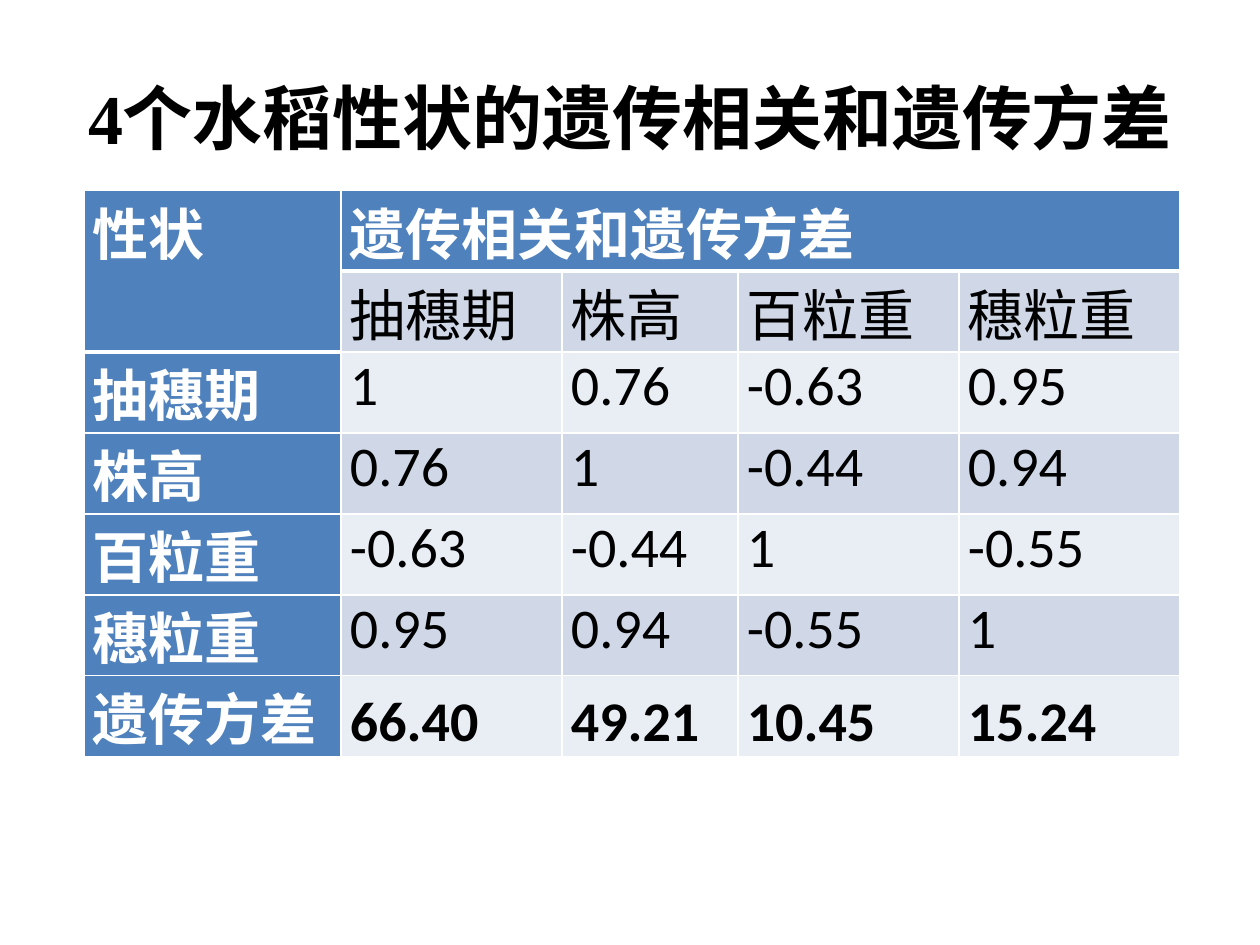
"""Build a slide with a table of genetic correlations of four rice traits."""
from lxml import etree
from pptx import Presentation
from pptx.dml.color import RGBColor
from pptx.enum.text import MSO_ANCHOR, PP_ALIGN
from pptx.oxml.ns import qn
from pptx.util import Emu, Pt

TOP, MIDDLE, BOTTOM = MSO_ANCHOR.TOP, MSO_ANCHOR.MIDDLE, MSO_ANCHOR.BOTTOM
LEFT, CENTER, JUSTIFY = PP_ALIGN.LEFT, PP_ALIGN.CENTER, PP_ALIGN.JUSTIFY
BLACK = RGBColor(0x00, 0x00, 0x00)
WHITE = RGBColor(0xFF, 0xFF, 0xFF)
BLUE = RGBColor(0x4F, 0x81, 0xBD)
BANDS = RGBColor(0xE9, 0xED, 0xF4), RGBColor(0xD0, 0xD8, 0xE8)

COL_WIDTHS = 257, 221, 176, 221, 221
ROW_HEIGHT = 81
TRAITS = ["抽穗期", "株高", "百粒重", "穗粒重"]
ROWS = [
    ["性状", "遗传相关和遗传方差", "", "", ""],
    ["", *TRAITS],
    [TRAITS[0], "1", "0.76", "-0.63", "0.95"],
    [TRAITS[1], "0.76", "1", "-0.44", "0.94"],
    [TRAITS[2], "-0.63", "-0.44", "1", "-0.55"],
    [TRAITS[3], "0.95", "0.94", "-0.55", "1"],
    ["遗传方差", "66.40", "49.21", "10.45", "15.24"],
]


def px(n):
    return Emu(round(n * 914400 / 126))


def write(tf, text, font="Calibri", size=32, color=BLACK, bold=False, align=LEFT):
    p = tf.paragraphs[0]
    p.alignment = align
    r = p.add_run()
    r.text = text
    r.font.name = font
    r.font.size = Pt(size)
    r.font.bold = bold
    r.font.color.rgb = color


def add_title(slide, text):
    sp = slide.shapes.add_textbox(px(63), px(38), px(1134), px(157))
    tf = sp.text_frame
    tf.word_wrap = True
    tf.vertical_anchor = MIDDLE
    write(tf, text, font="Times New Roman", size=40, bold=True, align=CENTER)


def set_borders(cell, **widths):
    tc_pr = cell._tc.get_or_add_tcPr()
    for side, width in widths.items():
        ln = etree.SubElement(tc_pr, qn(f"a:ln{side}"), w=str(Pt(width)))
        fill = etree.SubElement(ln, qn("a:solidFill"))
        etree.SubElement(fill, qn("a:srgbClr"), val=str(WHITE))


def format_cell(cell, row, col, text):
    is_header = row == 0 or col == 0
    is_variance = row == len(ROWS) - 1
    header_end = 2 if col == 0 else 1
    set_borders(cell, L=1, R=1, T=3 if row == header_end else 1,
                B=3 if row == header_end - 1 else 1)
    cell.fill.solid()
    cell.fill.fore_color.rgb = BLUE if is_header else BANDS[row % 2]
    cell.margin_left = cell.margin_right = px(9)
    cell.margin_top = cell.margin_bottom = 0
    cell.vertical_anchor = BOTTOM if is_variance and col else TOP
    if text:
        write(cell.text_frame, text, color=WHITE if is_header else BLACK,
              bold=is_header or is_variance, align=JUSTIFY if row < 2 else LEFT)


def add_trait_table(slide):
    frame = slide.shapes.add_table(len(ROWS), len(COL_WIDTHS), px(84), px(190),
                                   px(sum(COL_WIDTHS)), px(ROW_HEIGHT * len(ROWS)))
    table = frame.table
    for column, width in zip(table.columns, COL_WIDTHS):
        column.width = px(width)
    for row, texts in enumerate(ROWS):
        table.rows[row].height = px(ROW_HEIGHT)
        for col, text in enumerate(texts):
            format_cell(table.cell(row, col), row, col, text)
    table.cell(0, 0).merge(table.cell(1, 0))
    table.cell(0, 1).merge(table.cell(0, 4))


def main():
    prs = Presentation()
    prs.slide_width, prs.slide_height = px(1260), px(945)
    slide = prs.slides.add_slide(prs.slide_layouts[6])
    add_title(slide, "4个水稻性状的遗传相关和遗传方差")
    add_trait_table(slide)
    prs.save("out.pptx")


if __name__ == "__main__":
    main()
